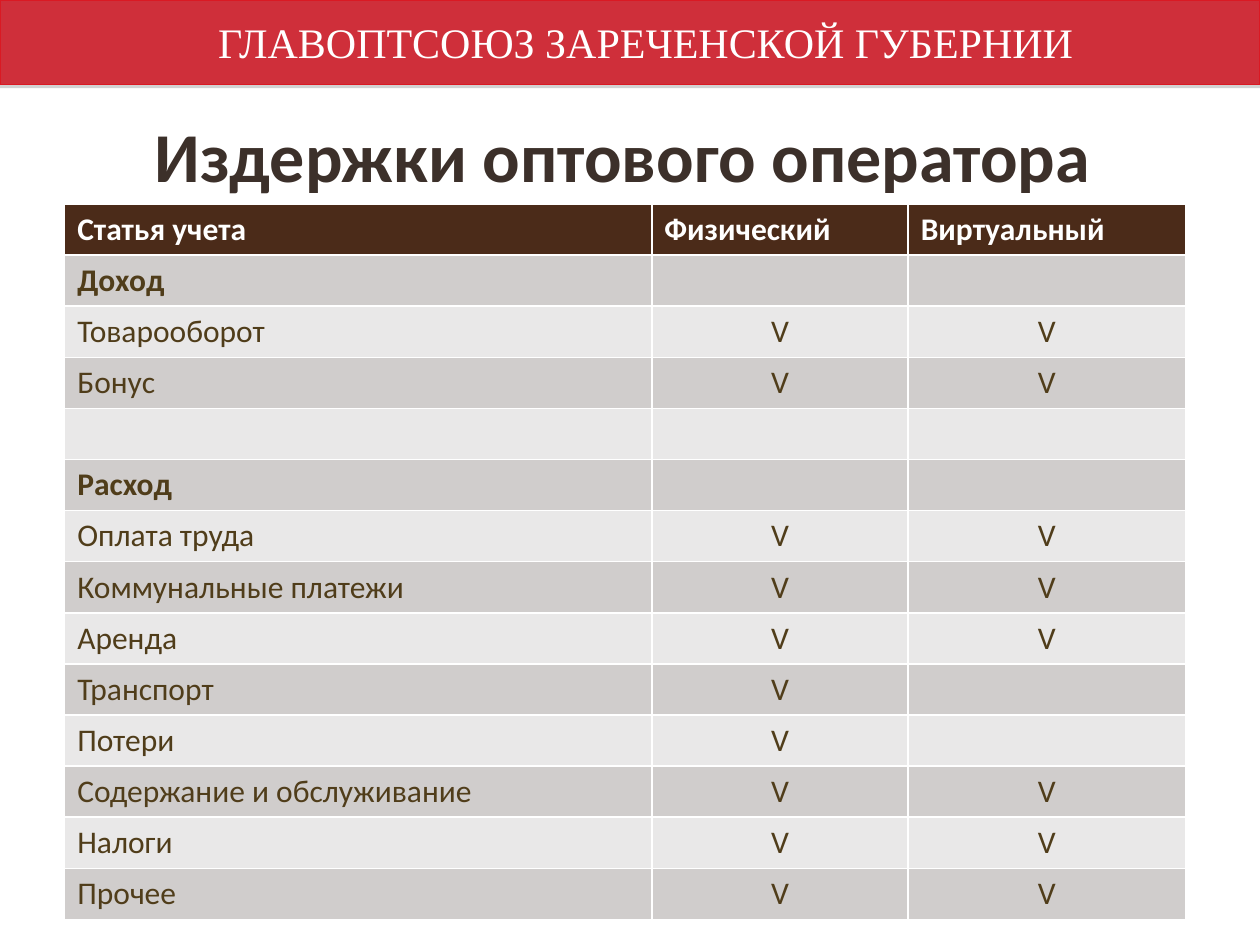
from lxml.etree import fromstring
from pptx import Presentation
from pptx.dml.color import RGBColor
from pptx.enum.shapes import MSO_SHAPE
from pptx.enum.text import MSO_ANCHOR, PP_ALIGN
from pptx.util import Pt

COLORS = {
    "white": "FFFFFF", "banner": "CF2F3A", "banner_line": "DA1923",
    "title": "3C302A", "header": "4B2B19", "text": "503D1A",
    "dark_band": "D0CDCC", "light_band": "E9E8E8",
}
SHADOW = """<a:effectLst xmlns:a="http://schemas.openxmlformats.org/drawingml/2006/main">
<a:outerShdw dist="22860" dir="5400000" rotWithShape="0">
<a:srgbClr val="808080"><a:alpha val="35000"/></a:srgbClr>
</a:outerShdw></a:effectLst>"""


def write_text(frame, text, size=18, color="text", font="Calibri", bold=False,
               align=PP_ALIGN.LEFT):
    paragraph = frame.paragraphs[0]
    paragraph.alignment = align
    run = paragraph.add_run()
    run.text = text
    run.font.name = font
    run.font.size = Pt(size)
    run.font.bold = bold
    run.font.color.rgb = RGBColor.from_string(COLORS[color])


presentation = Presentation()
presentation.slide_width, presentation.slide_height = Pt(720), Pt(540)
slide = presentation.slides.add_slide(presentation.slide_layouts[5])

# Banner across the top
banner = slide.shapes.add_shape(MSO_SHAPE.RECTANGLE, 0, 0, Pt(720), Pt(48.25))
banner.fill.solid()
banner.fill.fore_color.rgb = RGBColor.from_string(COLORS["banner"])
banner.line.color.rgb = RGBColor.from_string(COLORS["banner_line"])
banner.line.width = Pt(0.75)
banner.element.spPr.append(fromstring(SHADOW))
banner.text_frame.word_wrap = True
banner.text_frame.vertical_anchor = MSO_ANCHOR.MIDDLE
banner.text_frame.margin_left = Pt(25)
write_text(banner.text_frame, "ГЛАВОПТСОЮЗ ЗАРЕЧЕНСКОЙ ГУБЕРНИИ", size=24,
           color="white", font="Times New Roman", align=PP_ALIGN.CENTER)

# Title
title = slide.shapes.title
title.left, title.top, title.width, title.height = 0, Pt(54.7), Pt(720), Pt(67.7)
title.text_frame.vertical_anchor = MSO_ANCHOR.MIDDLE
title.text_frame.margin_right = Pt(16)
write_text(title.text_frame, "Издержки оптового оператора", size=40,
           color="title", bold=True, align=PP_ALIGN.CENTER)

# Table: one mark per column, section rows have none
rows = [
    ("Статья учета", "Физический", "Виртуальный"),
    ("Доход", "", ""),
    ("Товарооборот", "V", "V"),
    ("Бонус", "V", "V"),
    ("", "", ""),
    ("Расход", "", ""),
    ("Оплата труда", "V", "V"),
    ("Коммунальные платежи", "V", "V"),
    ("Аренда", "V", "V"),
    ("Транспорт", "V", ""),
    ("Потери", "V", ""),
    ("Содержание и обслуживание", "V", "V"),
    ("Налоги", "V", "V"),
    ("Прочее", "V", "V"),
]
column_widths = [335.5, 146.5, 158.5]
table = slide.shapes.add_table(len(rows), len(column_widths), Pt(37), Pt(116.6),
                               Pt(sum(column_widths)), Pt(29.2 * len(rows))).table
for column, width in zip(table.columns, column_widths):
    column.width = Pt(width)

for row_index, values in enumerate(rows):
    table.rows[row_index].height = Pt(29.2)
    is_header = row_index == 0
    is_section = not any(values[1:])
    band = "header" if is_header else ("light_band", "dark_band")[row_index % 2]
    for column_index, value in enumerate(values):
        cell = table.cell(row_index, column_index)
        cell.fill.solid()
        cell.fill.fore_color.rgb = RGBColor.from_string(COLORS[band])
        if value:
            write_text(cell.text_frame, value,
                       color="white" if is_header else "text",
                       bold=is_header or is_section,
                       align=PP_ALIGN.CENTER if value == "V" else PP_ALIGN.LEFT)

presentation.save("out.pptx")
